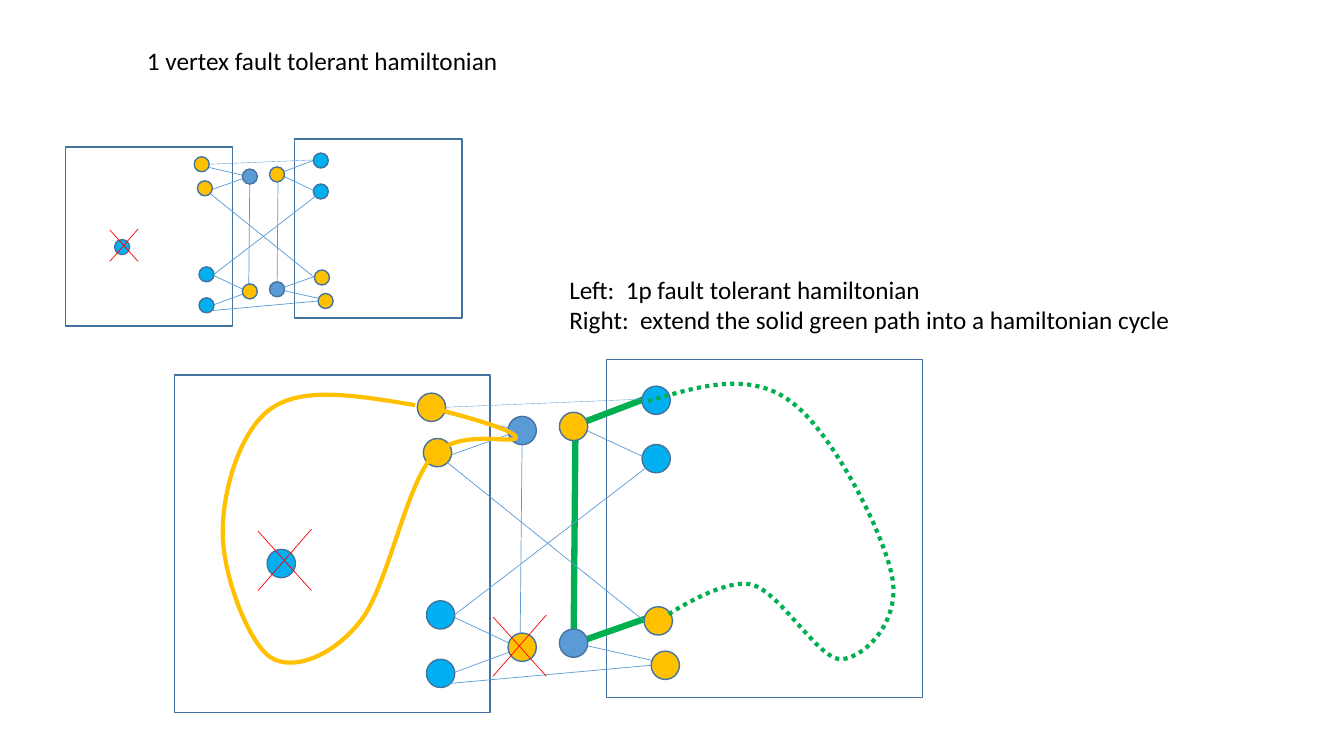
from lxml.etree import SubElement
from pptx import Presentation
from pptx.dml.color import RGBColor
from pptx.enum.dml import MSO_LINE_DASH_STYLE as Dash
from pptx.enum.shapes import MSO_CONNECTOR as Connector, MSO_SHAPE as Shape
from pptx.enum.text import MSO_AUTO_SIZE as AutoSize
from pptx.oxml.ns import qn
from pptx.util import Pt

COLORS = {"steel": "5B9BD5", "sky": "00B0F0", "gold": "FFC000", "green": "00B050",
          "red": "FF0000", "outline": "43739E", "black": "000000"}
FONT, FONT_SIZE = "Calibri", 18

# Texts: left, top, width, height, lines
TEXTS = [
    (97.9, 28.8, 337, 28.8, ["1 vertex fault tolerant hamiltonian"]),
    (399.6, 192.2, 460, 51.1, ["Left:  1p fault tolerant hamiltonian",
                               "Right:  extend the solid green path into a hamiltonian cycle"]),
]

# The network at full size; the small one is scaled from it
ORIGIN = (124.6, 267.8)
BOX_SIZE = (225.4, 241.2)
NODE_SIZE = 20.2
# Each side: box corner, edges (x1, y1, x2, y2, on green path), nodes (centre x, centre y, colour)
SIDES = [
    (ORIGIN,
     [(373, 307.5, 371.5, 463, False), (371.5, 307.5, 308.2, 293, False),
      (371.5, 307.5, 314.6, 327.6, False), (371.5, 463, 314.6, 436.3, False),
      (371.5, 463, 322.6, 481, False)],
     [(373, 307.5, "steel"), (373, 462.3, "gold"), (314.7, 481, "sky"),
      (314.7, 439.2, "sky"), (312.5, 323.3, "gold"), (308.2, 290.9, "gold")]),
    ((433.4, 257),
     [(409.7, 459.4, 411.1, 303.8, True), (411.1, 459.4, 475.2, 473.8, False),
      (411.1, 459.4, 468.7, 439.2, True), (411.1, 303.8, 468.7, 330.5, False),
      (411.1, 303.8, 460.1, 285.1, True)],
     [(409.7, 459.4, "steel"), (409.7, 304.6, "gold"), (468.7, 285.9, "sky"),
      (468.7, 327.6, "sky"), (470.2, 443.5, "gold"), (475.2, 475.2, "gold")]),
]
# Edges between the sides: x1, y1, x2, y2, line width
BRIDGES = [(318.2, 290.9, 458.6, 285.1, 0.25), (319.7, 330.5, 460.1, 443.5, 0.5),
           (324.7, 439.2, 461.5, 334.1, 0.5), (321.1, 488.2, 465.1, 475.2, 0.5)]
FAULTY_NODE = (200.9, 402.5, "sky")
CROSS = [(184.3, 379.4, 222.5, 421.9), (222.5, 378, 184.3, 421.9)]
SECOND_CROSS = (167.8, 61.2)  # shift from the first cross

# Networks: origin, scale, shifts of the red crosses, green path shown
NETWORKS = [((46.8, 105.1), 0.53, [(0, 0)], False),
            (ORIGIN, 1, [(0, 0), SECOND_CROSS], True)]

# Curves: box, start, Bezier segments, colour, dash
CURVES = [
    ((159.1, 281.5, 209.5, 192.2), (296.6, 289.4),
     [[(257, 283), (218.2, 275.8), (195.1, 290.9)],
      [(172.1, 305.3), (159.1, 349.2), (159.1, 379.4)],
      [(158.4, 409), (177.1, 458.6), (193, 469.4)],
      [(209.5, 480.2), (238.3, 468), (257, 444.2)],
      [(276.5, 420.5), (289.4, 348.5), (308.2, 326.9)],
      [(326.9, 304.6), (367.9, 318.2), (368.6, 312.5)],
      [(369.4, 306.7), (311.8, 292.3), (311.8, 292.3)]], "gold", None),
    ((463, 274.3, 175.7, 196.6), (463, 286.6),
     [[(499, 275.8), (535.7, 265), (564.5, 286.6)],
      [(594, 307.4), (631.4, 380.9), (637.2, 411.8)],
      [(643.7, 442.8), (618.5, 469.4), (601.2, 470.9)],
      [(584.6, 471.6), (558, 423.4), (537.1, 417.6)],
      [(516.2, 412.6), (475.9, 439.9), (475.9, 439.9)]], "green", Dash.ROUND_DOT),
]


def rgb(name):
    return RGBColor.from_string(COLORS[name])


def style(shape, line, width, fill=None):
    shape.shadow.inherit = False
    shape.line.color.rgb = rgb(line)
    shape.line.width = Pt(width)
    if fill:
        shape.fill.solid()
        shape.fill.fore_color.rgb = rgb(fill)
    else:
        shape.fill.background()


def add_network(slide, origin, scale, cross_shifts, show_path):
    shapes = slide.shapes.add_group_shape().shapes

    def place(x, y):
        return [Pt(start + scale * (value - base))
                for start, value, base in zip(origin, (x, y), ORIGIN)]

    def add_line(x1, y1, x2, y2, color="steel", width=0.5):
        line = shapes.add_connector(Connector.STRAIGHT, *place(x1, y1), *place(x2, y2))
        line.line.color.rgb = rgb(color)
        line.line.width = Pt(width)
        SubElement(line._element.spPr, qn("a:effectLst"))

    def add_node(x, y, color):
        corner = place(x - NODE_SIZE / 2, y - NODE_SIZE / 2)
        size = Pt(NODE_SIZE * scale)
        style(shapes.add_shape(Shape.OVAL, *corner, size, size), "outline", 1, color)

    # Boxes with their edges and nodes
    for corner, edges, nodes in SIDES:
        size = [Pt(length * scale) for length in BOX_SIZE]
        style(shapes.add_shape(Shape.RECTANGLE, *place(*corner), *size), "outline", 1)
        for *ends, on_path in edges:
            add_line(*ends, *(("green", 4.5) if on_path and show_path else ()))
        for node in nodes:
            add_node(*node)

    # Edges between the boxes
    for *ends, width in BRIDGES:
        add_line(*ends, width=width)

    # Faulty vertices
    add_node(*FAULTY_NODE)
    for dx, dy in cross_shifts:
        for x1, y1, x2, y2 in CROSS:
            add_line(x1 + dx, y1 + dy, x2 + dx, y2 + dy, "red")


def add_curve(slide, box, start, segments, color, dash):
    left, top, width, height = [Pt(value) for value in box]
    builder = slide.shapes.build_freeform(Pt(start[0]), Pt(start[1]))
    builder.add_line_segments([(Pt(x), Pt(y)) for x, y in segments[0]], close=False)
    curve = builder.convert_to_shape()
    curve.left, curve.top, curve.width, curve.height = left, top, width, height
    style(curve, color, 3)
    if dash:
        curve.line.dash_style = dash

    # Smooth segments in place of straight ones
    outline = curve._element.find(".//" + qn("a:path"))
    for child in list(outline):
        outline.remove(child)
    outline.set("w", str(width))
    outline.set("h", str(height))
    steps = [("a:moveTo", [start])] + [("a:cubicBezTo", points) for points in segments]
    for tag, points in steps:
        step = SubElement(outline, qn(tag))
        for x, y in points:
            SubElement(step, qn("a:pt"), x=str(Pt(x) - left), y=str(Pt(y) - top))


def add_text(slide, left, top, width, height, lines):
    box = slide.shapes.add_textbox(Pt(left), Pt(top), Pt(width), Pt(height))
    frame = box.text_frame
    frame.word_wrap = True
    frame.auto_size = AutoSize.SHAPE_TO_FIT_TEXT
    for index, line in enumerate(lines):
        paragraph = frame.add_paragraph() if index else frame.paragraphs[0]
        run = paragraph.add_run()
        run.text = line
        run.font.name = FONT
        run.font.size = Pt(FONT_SIZE)
        run.font.color.rgb = rgb("black")


def main():
    presentation = Presentation()
    presentation.slide_width, presentation.slide_height = Pt(960), Pt(540)
    slide = presentation.slides.add_slide(presentation.slide_layouts[6])
    for network in NETWORKS:
        add_network(slide, *network)
    for curve in CURVES:
        add_curve(slide, *curve)
    for text in TEXTS:
        add_text(slide, *text)
    presentation.save("out.pptx")


if __name__ == "__main__":
    main()
